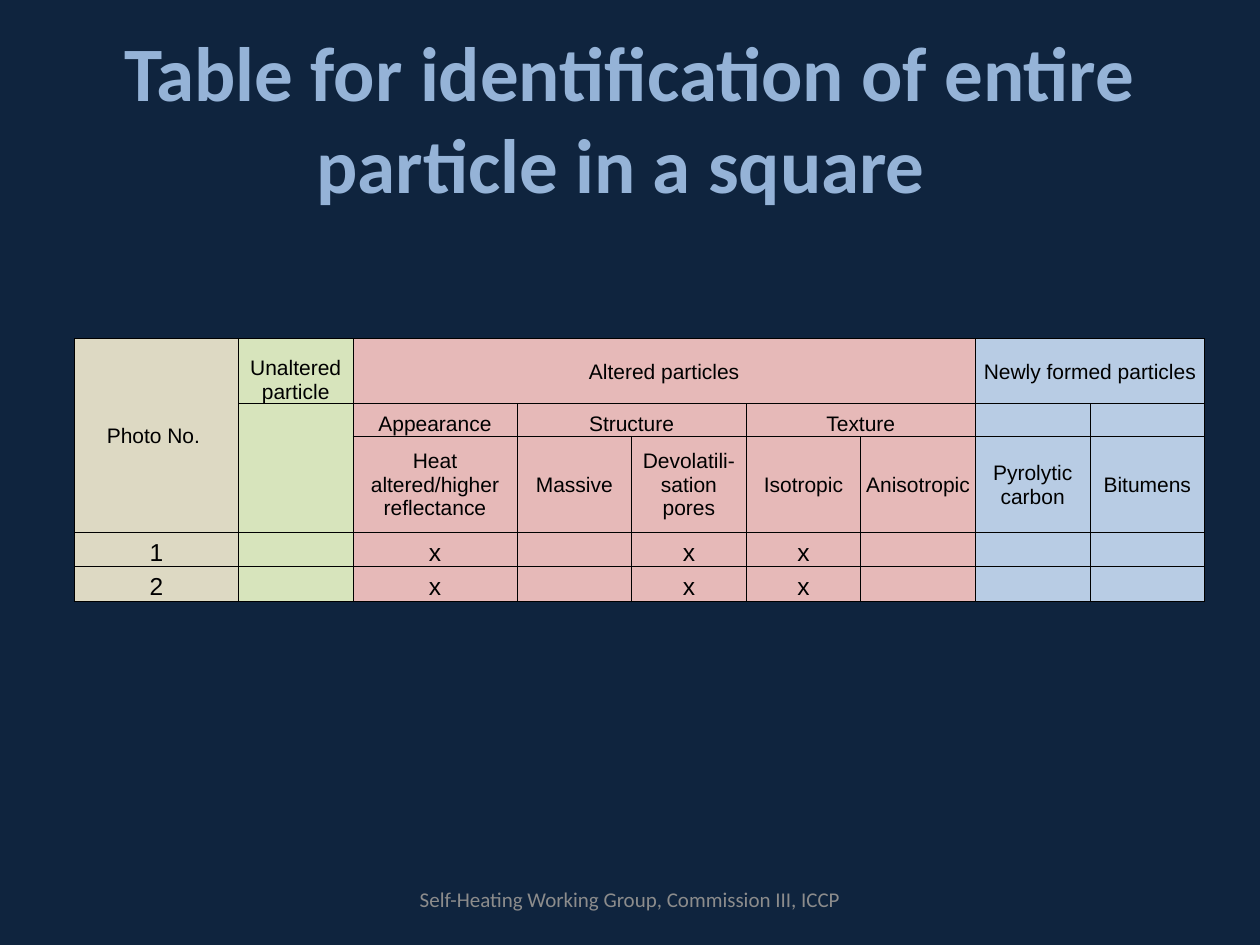
from lxml import etree
from pptx import Presentation
from pptx.dml.color import RGBColor
from pptx.enum.text import MSO_ANCHOR, MSO_AUTO_SIZE, PP_ALIGN
from pptx.oxml.ns import qn
from pptx.util import Pt

CENTER = PP_ALIGN.CENTER
MIDDLE, BOTTOM = MSO_ANCHOR.MIDDLE, MSO_ANCHOR.BOTTOM
NO_FIT = MSO_AUTO_SIZE.NONE

NAVY = RGBColor(0x0F, 0x24, 0x3E)
SKY = RGBColor(0x95, 0xB3, 0xD7)
GRAY = RGBColor(0x8C, 0x8C, 0x8C)
BLACK = RGBColor(0x00, 0x00, 0x00)
BEIGE = RGBColor(0xDD, 0xD9, 0xC3)
GREEN = RGBColor(0xD7, 0xE4, 0xBC)
PINK = RGBColor(0xE6, 0xB9, 0xB8)
BLUE = RGBColor(0xB8, 0xCC, 0xE4)

COL_FILLS = [BEIGE, GREEN] + [PINK] * 5 + [BLUE] * 2
COL_WIDTHS = [93.75, 65.5, 93.75] + [65.5] * 6
ROW_HEIGHTS = [37.2, 18.6, 55, 19.6, 19.6]
ROW_SIZES = [12, 12, 12, 14, 14]
ROW_ANCHORS = [MIDDLE, BOTTOM, MIDDLE, BOTTOM, BOTTOM]
MERGES = [((0, 0), (2, 0)), ((1, 1), (2, 1)), ((0, 2), (0, 6)),
          ((0, 7), (0, 8)), ((1, 3), (1, 4)), ((1, 5), (1, 6))]
CELLS = [
    ["Photo No. ", "Unaltered particle", "Altered particles", "", "", "", "",
     "Newly formed particles", ""],
    ["", "", "Appearance", "Structure", "", "Texture", "", "", ""],
    ["", "", "Heat altered/higher reflectance", "Massive",
     "Devolatili-sation pores", "Isotropic", "Anisotropic",
     "Pyrolytic carbon", "Bitumens"],
    ["1", "", "x", "", "x", "x", "", "", ""],
    ["2", "", "x", "", "x", "x", "", "", ""],
]


def write(tf, text, size, color, font, bold=False):
    p = tf.paragraphs[0]
    if text:
        p.add_run().text = text
    else:
        p._p.get_or_add_endParaRPr().set("sz", str(size * 100))
    p.alignment = CENTER
    p.font.size = Pt(size)
    p.font.name = font
    p.font.bold = bold
    p.font.color.rgb = color


def place_text(sp, box, text, size, color, bold=False):
    sp.left, sp.top, sp.width, sp.height = (Pt(v) for v in box)
    tf = sp.text_frame
    tf.word_wrap = True
    tf.auto_size = NO_FIT
    tf.vertical_anchor = MIDDLE
    write(tf, text, size, color, "Calibri", bold)


def add_title(s, box):
    place_text(s.shapes.title, box,
               "Table for identification of entire particle in a square ",
               44, SKY, True)


def add_footer(s, box):
    sp = s.shapes.add_textbox(*(Pt(v) for v in box))
    place_text(sp, box, "Self-Heating Working Group, Commission III, ICCP",
               12, GRAY)


def add_borders(cell):
    tc_pr = cell._tc.get_or_add_tcPr()
    for side in ("lnL", "lnR", "lnT", "lnB"):
        ln = etree.SubElement(tc_pr, qn(f"a:{side}"), w=str(Pt(0.5)))
        fill = etree.SubElement(ln, qn("a:solidFill"))
        etree.SubElement(fill, qn("a:srgbClr"), val=str(BLACK))


def add_particle_table(s, box):
    frame = s.shapes.add_table(len(CELLS), len(COL_FILLS),
                               *(Pt(v) for v in box))
    table = frame.table
    table.first_row = table.horz_banding = False
    for column, width in zip(table.columns, COL_WIDTHS):
        column.width = Pt(width)
    for r, texts in enumerate(CELLS):
        table.rows[r].height = Pt(ROW_HEIGHTS[r])
        for c, text in enumerate(texts):
            cell = table.cell(r, c)
            cell.margin_left = cell.margin_right = cell.margin_top = Pt(0.7)
            cell.margin_bottom = 0
            cell.vertical_anchor = ROW_ANCHORS[r]
            add_borders(cell)
            cell.fill.solid()
            cell.fill.fore_color.rgb = COL_FILLS[c]
            write(cell.text_frame, text, ROW_SIZES[r], BLACK, "Arial")
    table.cell(0, 1).vertical_anchor = BOTTOM
    for (top, left), (bottom, right) in MERGES:
        table.cell(top, left).merge(table.cell(bottom, right))


def main():
    prs = Presentation()
    prs.slide_width, prs.slide_height = Pt(720), Pt(540)
    s = prs.slides.add_slide(prs.slide_layouts[5])
    s.background.fill.solid()
    s.background.fill.fore_color.rgb = NAVY
    add_title(s, (36, 21.6, 648, 90))
    add_footer(s, (225, 494, 270, 39.6))
    add_particle_table(s, (42.5, 193.5, sum(COL_WIDTHS), sum(ROW_HEIGHTS)))
    prs.save("out.pptx")


if __name__ == "__main__":
    main()
